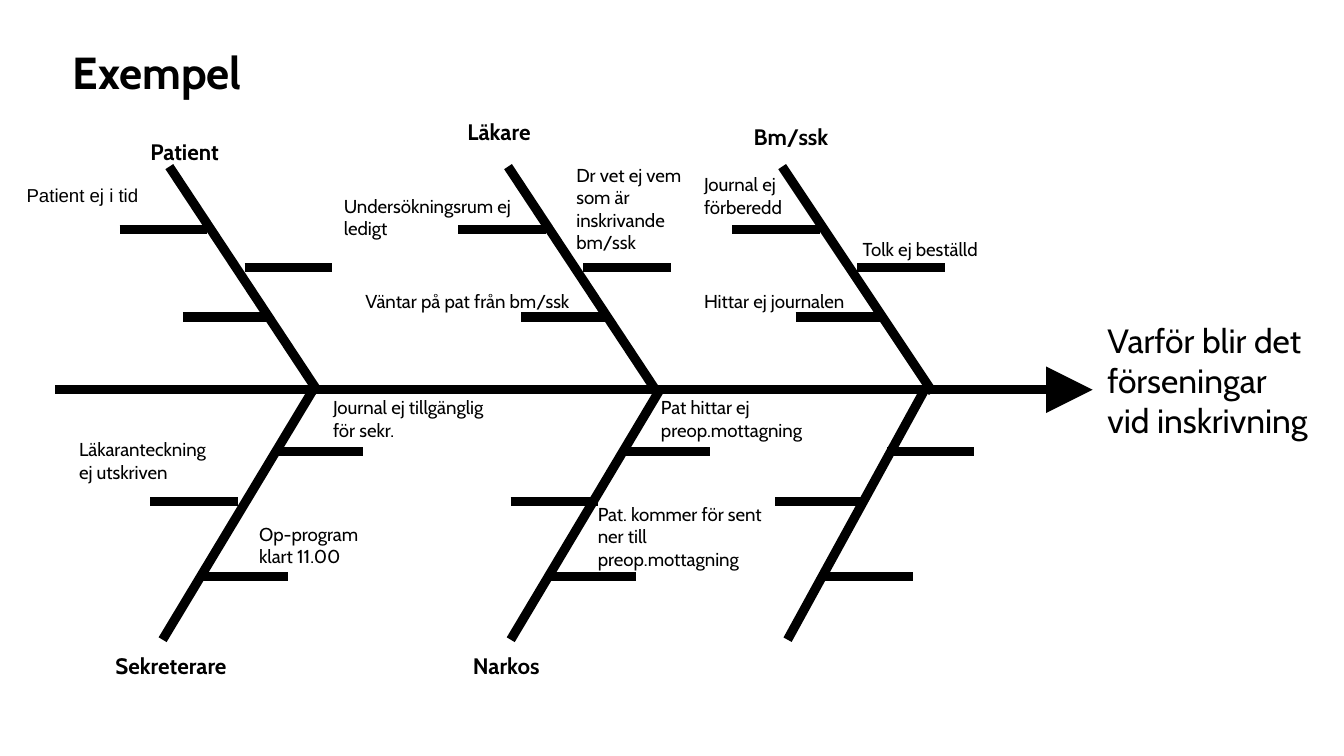
from dataclasses import dataclass

import pptx
import pptx.enum.shapes
import pptx.enum.text
import pptx.dml.color
import pptx.oxml
import pptx.oxml.ns
import pptx.util
from pptx.util import Inches

COLORS = {"ink": "000000", "paper": "FFFFFF"}
FONT = "Cabin"
SLIDE_WIDTH = 10
SLIDE_HEIGHT = SLIDE_WIDTH * 9 / 16
LINE_WIDTH = 5
SPINE_Y = 2.9
TWIG_LENGTH = 0.65
UPPER_TIP_Y, UPPER_JOINT_Y = 1.24, 2.92
LOWER_TIP_Y = 4.76
UPPER_TWIG_YS = (1.71, 1.99, 2.36)
LOWER_TWIG_YS = (3.36, 3.73, 4.29)
UPPER_TWIG_OFFSETS = (-0.37, 0.56, 0.1)


@dataclass
class Bone:
    tip: tuple[float, float]
    joint: tuple[float, float]
    twigs: list[tuple[float, float]]


@dataclass
class Label:
    text: str
    left: float
    top: float
    width: float
    height: float
    size: float = 10
    bold: bool = False
    font: str = FONT


def upper_bone(tip_x: float, joint_x: float) -> Bone:
    twigs = [(tip_x + offset, y) for offset, y in zip(UPPER_TWIG_OFFSETS, UPPER_TWIG_YS)]
    return Bone((tip_x, UPPER_TIP_Y), (joint_x, UPPER_JOINT_Y), twigs)


def lower_bone(tip_x: float, joint_x: float, *twig_lefts: float) -> Bone:
    return Bone((tip_x, LOWER_TIP_Y), (joint_x, SPINE_Y), list(zip(twig_lefts, LOWER_TWIG_YS)))


BONES = [
    upper_bone(5.82, 6.94),
    upper_bone(1.26, 2.37),
    upper_bone(3.78, 4.89),
    lower_bone(5.86, 6.88, 6.6, 5.77, 6.14),
    lower_bone(3.8, 4.91, 4.63, 3.8, 4.08),
    lower_bone(1.21, 2.33, 2.05, 1.12, 1.49),
]

LABELS = [
    Label("Varför blir det förseningar vid inskrivning", 8.14, 2.33, 1.75, 1.01, 18),
    Label("Patient", 1.02, 0.98, 1.89, 0.3, 12, True),
    Label("Läkare", 3.38, 0.83, 1.57, 0.3, 12, True),
    Label("Bm/ssk", 5.51, 0.87, 1.73, 0.3, 12, True),
    Label("Sekreterare", 0.76, 4.8, 1.89, 0.3, 12, True),
    Label("Narkos", 3.42, 4.8, 1.81, 0.3, 12, True),
    Label("Patient ej i tid", 0.1, 1.32, 1.34, 0.27, font="Arial"),
    Label("Läkaranteckning ej utskriven", 0.49, 3.21, 1.26, 0.68),
    Label("Journal ej tillgänglig för sekr.", 2.38, 2.9, 1.34, 0.43),
    Label("Op-program klart 11.00", 1.83, 3.84, 1.1, 0.43),
    Label("Undersökningsrum ej ledigt", 2.46, 1.4, 1.57, 0.68),
    Label("Väntar på pat från bm/ssk", 2.62, 2.11, 1.89, 0.27),
    Label("Dr vet ej vem som är inskrivande bm/ssk", 4.19, 1.17, 1.26, 0.61),
    Label("Journal ej förberedd", 5.14, 1.24, 1.26, 0.43),
    Label("Hittar ej journalen", 5.14, 2.11, 1.58, 0.27),
    Label("Tolk ej beställd", 6.32, 1.72, 1.89, 0.27),
    Label("Pat hittar ej preop.mottagning", 4.82, 2.9, 1.5, 0.43),
    Label("Pat. kommer för sent ner till preop.mottagning", 4.35, 3.69, 1.5, 0.6),
]


def rgb(name: str) -> pptx.dml.color.RGBColor:
    return pptx.dml.color.RGBColor.from_string(COLORS[name])


def set_font(paragraph, size: float, bold: bool, name: str = FONT) -> None:
    font = paragraph.font
    font.name = name
    font.size = pptx.util.Pt(size)
    font.bold = bold
    font.color.rgb = rgb("ink")


def add_line(slide, start: tuple[float, float], end: tuple[float, float], arrow: bool = False) -> None:
    connector = slide.shapes.add_connector(
        pptx.enum.shapes.MSO_CONNECTOR.STRAIGHT, *map(Inches, (*start, *end)))
    connector.line.color.rgb = rgb("ink")
    connector.line.width = pptx.util.Pt(LINE_WIDTH)
    namespace = pptx.oxml.ns.nsdecls("a")
    properties = connector._element.spPr
    if arrow:
        properties.find(pptx.oxml.ns.qn("a:ln")).append(pptx.oxml.parse_xml(
            f'<a:tailEnd {namespace} type="triangle" w="lg" len="lg"/>'))
    properties.append(pptx.oxml.parse_xml(f"<a:effectLst {namespace}/>"))


def add_bone(slide, bone: Bone) -> None:
    """Draw a slanted bone and its three horizontal twigs."""
    add_line(slide, bone.tip, bone.joint)
    for left, y in bone.twigs:
        add_line(slide, (left, y), (left + TWIG_LENGTH, y))


def add_label(slide, label: Label) -> None:
    box = slide.shapes.add_textbox(
        *map(Inches, (label.left, label.top, label.width, label.height)))
    frame = box.text_frame
    frame.word_wrap = True
    frame.text = label.text
    set_font(frame.paragraphs[0], label.size, label.bold, label.font)


def format_title(slide, text: str) -> None:
    title = slide.shapes.title
    title.left, title.top, title.width, title.height = map(Inches, (0.44, 0.33, 4.6, 0.56))
    frame = title.text_frame
    frame.text = text
    frame.word_wrap = True
    frame.auto_size = pptx.enum.text.MSO_AUTO_SIZE.NONE
    frame.vertical_anchor = pptx.enum.text.MSO_ANCHOR.TOP
    paragraph = frame.paragraphs[0]
    paragraph.alignment = pptx.enum.text.PP_ALIGN.LEFT
    paragraph.line_spacing = 0.9
    set_font(paragraph, 24, True)


def main() -> None:
    presentation = pptx.Presentation()
    presentation.slide_width = Inches(SLIDE_WIDTH)
    presentation.slide_height = Inches(SLIDE_HEIGHT)
    slide = presentation.slides.add_slide(presentation.slide_layouts.get_by_name("Title Only"))
    slide.background.fill.solid()
    slide.background.fill.fore_color.rgb = rgb("paper")
    format_title(slide, "Exempel")
    add_line(slide, (0.41, SPINE_Y), (8.13, SPINE_Y), arrow=True)
    for bone in BONES:
        add_bone(slide, bone)
    for label in LABELS:
        add_label(slide, label)
    presentation.save("out.pptx")


if __name__ == "__main__":
    main()
